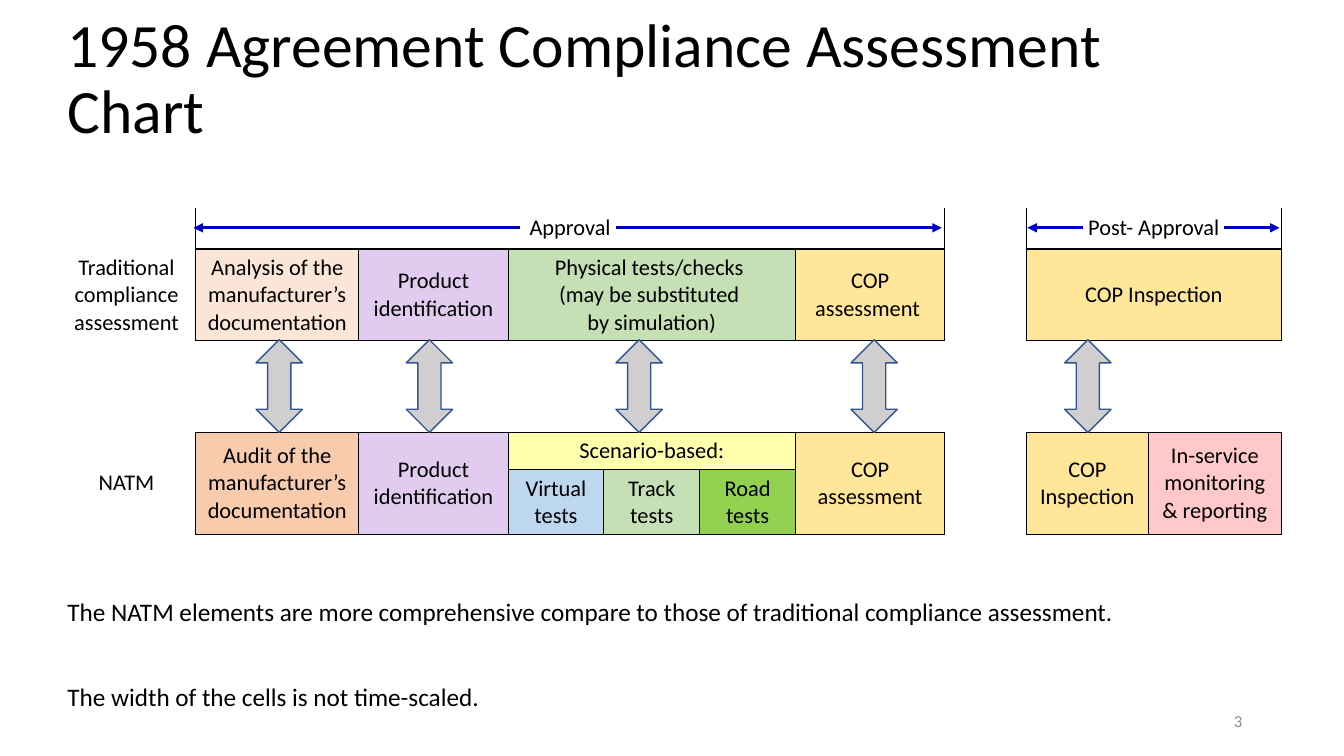
from dataclasses import dataclass
from typing import Optional

from lxml import etree
from pptx import Presentation
from pptx.dml.color import RGBColor
from pptx.enum.shapes import MSO_CONNECTOR, MSO_SHAPE
from pptx.enum.text import MSO_ANCHOR, MSO_AUTO_SIZE, PP_ALIGN
from pptx.oxml.ns import qn
from pptx.util import Inches, Pt

LEFT, CENTER, RIGHT = PP_ALIGN.LEFT, PP_ALIGN.CENTER, PP_ALIGN.RIGHT
TOP, MIDDLE = MSO_ANCHOR.TOP, MSO_ANCHOR.MIDDLE
STRAIGHT = MSO_CONNECTOR.STRAIGHT
UP_DOWN_ARROW = MSO_SHAPE.UP_DOWN_ARROW
FIT_SHAPE = MSO_AUTO_SIZE.SHAPE_TO_FIT_TEXT

BLACK = RGBColor(0x00, 0x00, 0x00)
GREY = RGBColor(0x8C, 0x8C, 0x8C)
BLUE = RGBColor(0x00, 0x00, 0xCC)
ARROW_FILL = RGBColor(0xD0, 0xCE, 0xCE)
ARROW_LINE = RGBColor(0x32, 0x54, 0x91)
PEACH = RGBColor(0xFB, 0xE5, 0xD6)
ORANGE = RGBColor(0xF8, 0xCB, 0xAD)
PURPLE = RGBColor(0xE1, 0xCC, 0xF0)
GREEN = RGBColor(0xC5, 0xE0, 0xB4)
BRIGHT_GREEN = RGBColor(0x92, 0xD0, 0x50)
GOLD = RGBColor(0xFF, 0xE6, 0x99)
YELLOW = RGBColor(0xFF, 0xFF, 0xAB)
SKY = RGBColor(0xBD, 0xD7, 0xEE)
PINK = RGBColor(0xFF, 0xC9, 0xC9)

FONT = "Calibri"
PLAIN_STYLE = "{2D5ABB26-0587-4C30-8999-92F81FD0307C}"
MARGIN = 0.57
TABLE_TOP = 2.06
COLS = [1.37, 1.62, 1.48, 0.95, 0.95, 0.95, 1.48, 0.81, 1.21, 1.32]
ROWS = [0.41, 0.91, 0.91, 0.37, 0.64]


@dataclass
class Cell:
    row: int
    col: int
    text: str = ""
    fill: Optional[RGBColor] = None
    rows: int = 1
    cols: int = 1
    sides: str = "LRTB"


@dataclass
class Label:
    text: str
    top: float
    width: float
    height: float
    size: float
    left: float = MARGIN
    color: RGBColor = BLACK
    align: PP_ALIGN = LEFT
    anchor: MSO_ANCHOR = TOP
    spacing: float = 1.0


CELLS = [
    Cell(0, 0, sides="R"),
    Cell(0, 1, "Approval", cols=6, sides="LRB"),
    Cell(0, 7, sides="LR"),
    Cell(0, 8, "Post- Approval", cols=2, sides="LRB"),
    Cell(1, 0, "Traditional compliance assessment", sides="R"),
    Cell(1, 1, "Analysis of the manufacturer’s documentation", PEACH),
    Cell(1, 2, "Product identification", PURPLE),
    Cell(1, 3, "Physical tests/checks \v(may be substituted \vby simulation)", GREEN, cols=3),
    Cell(1, 6, "COP assessment ", GOLD),
    Cell(1, 7, sides="LR"),
    Cell(1, 8, "COP Inspection", GOLD, cols=2),
    Cell(2, 0, sides=""),
    Cell(2, 1, sides="TB"),
    Cell(2, 2, sides="TB"),
    Cell(2, 3, cols=3, sides="TB"),
    Cell(2, 6, sides="TB"),
    Cell(2, 7, sides=""),
    Cell(2, 8, sides="TB"),
    Cell(2, 9, sides="TB"),
    Cell(3, 0, "NATM", rows=2, sides="R"),
    Cell(3, 1, "Audit of the manufacturer’s documentation", ORANGE, rows=2),
    Cell(3, 2, "Product identification", PURPLE, rows=2),
    Cell(3, 3, "Scenario-based:", YELLOW, cols=3),
    Cell(3, 6, "COP assessment", GOLD, rows=2),
    Cell(3, 7, rows=2, sides="LR"),
    Cell(3, 8, "COP Inspection", GOLD, rows=2),
    Cell(3, 9, "In-service monitoring & reporting", PINK, rows=2),
    Cell(4, 3, "Virtual tests", SKY),
    Cell(4, 4, "Track tests", GREEN),
    Cell(4, 5, "Road tests", BRIGHT_GREEN),
]

LABELS = [
    Label("3", 6.95, 3, 0.4, 12, left=9.42, color=GREY, align=RIGHT, anchor=MIDDLE),
    Label("1958 Agreement Compliance Assessment Chart", 0.35, 11.85, 0.9, 44,
          anchor=MIDDLE, spacing=0.9),
    Label("The NATM elements are more comprehensive compare to those of "
          "traditional compliance assessment.", 5.87, 10.85, 0.4, 18),
    Label("The width of the cells is not time-scaled.", 6.71, 10.85, 0.4, 18),
]

PHASE_ARROWS = [(5.16, 1.92), (6.11, 9.34), (10.74, 10.19), (12.14, 12.69)]
LINK_LEFTS = [2.54, 4.03, 6.11, 8.44, 10.56]


def write(tf, text: str, *, size: float, color: RGBColor = BLACK,
          align: PP_ALIGN = LEFT, spacing: float = 1.0) -> None:
    p = tf.paragraphs[0]
    p.text = text
    p.alignment = align
    p.line_spacing = spacing
    for r in p.runs:
        r.font.name = FONT
        r.font.size = Pt(size)
        r.font.color.rgb = color


def add_label(slide, label: Label) -> None:
    sp = slide.shapes.add_textbox(Inches(label.left), Inches(label.top),
                                  Inches(label.width), Inches(label.height))
    tf = sp.text_frame
    tf.word_wrap = True
    tf.vertical_anchor = label.anchor
    if label.anchor == TOP:
        tf.auto_size = FIT_SHAPE
    write(tf, label.text, size=label.size, color=label.color,
          align=label.align, spacing=label.spacing)


def add_borders(cell, sides: str) -> None:
    tcPr = cell._tc.get_or_add_tcPr()
    for side in sides:
        ln = etree.SubElement(tcPr, qn(f"a:ln{side}"), w=str(Pt(1)))
        fill = etree.SubElement(ln, qn("a:solidFill"))
        etree.SubElement(fill, qn("a:srgbClr"), val=str(BLACK))


def fill_cell(table, spec_cell: Cell) -> None:
    last_row = spec_cell.row + spec_cell.rows - 1
    last_col = spec_cell.col + spec_cell.cols - 1
    origin = table.cell(spec_cell.row, spec_cell.col)
    if (last_row, last_col) != (spec_cell.row, spec_cell.col):
        origin.merge(table.cell(last_row, last_col))
    for row in range(spec_cell.row, last_row + 1):
        for col in range(spec_cell.col, last_col + 1):
            cell = table.cell(row, col)
            add_borders(cell, spec_cell.sides)
            if spec_cell.fill is None:
                cell.fill.background()
            else:
                cell.fill.solid()
                cell.fill.fore_color.rgb = spec_cell.fill
    origin.vertical_anchor = MIDDLE
    if spec_cell.text:
        write(origin.text_frame, spec_cell.text, size=16, align=CENTER)


def add_assessment_table(slide) -> None:
    frame = slide.shapes.add_table(len(ROWS), len(COLS), Inches(MARGIN), Inches(TABLE_TOP),
                                   Inches(sum(COLS)), Inches(sum(ROWS)))
    table = frame.table
    table.first_row = False
    table.horz_banding = False
    table._tbl.tblPr.find(qn("a:tableStyleId")).text = PLAIN_STYLE
    for column, width in zip(table.columns, COLS):
        column.width = Inches(width)
    for row, height in zip(table.rows, ROWS):
        row.height = Inches(height)
    for cell in CELLS:
        fill_cell(table, cell)


def add_phase_arrow(slide, start: float, end: float) -> None:
    y = Inches(2.26)
    line = slide.shapes.add_connector(STRAIGHT, Inches(start), y, Inches(end), y)
    line.line.color.rgb = BLUE
    line.line.width = Pt(2.25)
    etree.SubElement(line.line._get_or_add_ln(), qn("a:tailEnd"), type="triangle")
    etree.SubElement(line._element.spPr, qn("a:effectLst"))


def add_link_arrow(slide, left: float) -> None:
    sp = slide.shapes.add_shape(UP_DOWN_ARROW, Inches(left), Inches(3.37),
                                Inches(0.46), Inches(0.92))
    sp.shadow.inherit = False
    sp.fill.solid()
    sp.fill.fore_color.rgb = ARROW_FILL
    sp.line.color.rgb = ARROW_LINE
    sp.line.width = Pt(1)


def main() -> None:
    prs = Presentation()
    prs.slide_width, prs.slide_height = Inches(13.33), Inches(7.5)
    slide = prs.slides.add_slide(prs.slide_layouts[6])
    for label in LABELS:
        add_label(slide, label)
    add_assessment_table(slide)
    for start, end in PHASE_ARROWS:
        add_phase_arrow(slide, start, end)
    for left in LINK_LEFTS:
        add_link_arrow(slide, left)
    prs.save("out.pptx")


if __name__ == "__main__":
    main()
